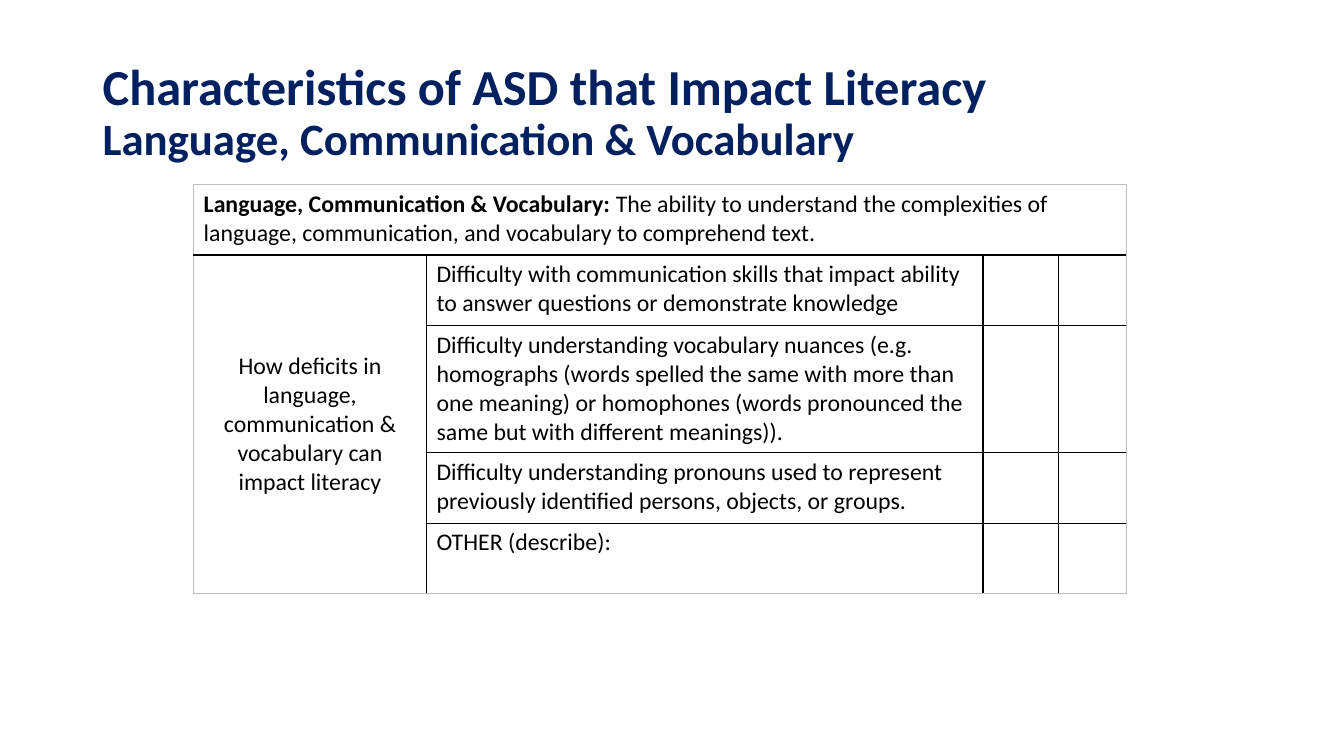
from pptx import Presentation
from pptx.dml.color import RGBColor
from pptx.enum.text import MSO_ANCHOR, PP_ALIGN
from pptx.oxml.ns import qn
from pptx.util import Inches, Pt
from lxml.etree import SubElement

FONT = "Calibri"
NAVY, BLACK, WHITE, GREY = "002060", "000000", "FFFFFF", "BFBFBF"
COLUMNS = [2.31, 5.52, 0.75, 0.67]
ROWS = [0.7, 0.7, 1.26, 0.7, 0.7]
TITLE = ["Characteristics of ASD that Impact Literacy",
         "Language, Communication & Vocabulary"]
SKILL = "Language, Communication & Vocabulary: "
DEFINITION = ("The ability to understand the complexities of language, "
              "communication, and vocabulary to comprehend text.")
IMPACT = "How deficits in language, communication & vocabulary can impact literacy"
DIFFICULTIES = [
    "Difficulty with communication skills that impact ability to answer "
    "questions or demonstrate knowledge",
    "Difficulty understanding vocabulary nuances (e.g. homographs (words spelled "
    "the same with more than one meaning) or homophones (words pronounced the "
    "same but with different meanings)).",
    "Difficulty understanding pronouns used to represent previously identified "
    "persons, objects, or groups.",
    "OTHER (describe):",
]


def rgb(value):
    """Return the colour for a hex string."""
    return RGBColor.from_string(value)


def add_run(p, text, size=17, color=BLACK, bold=False):
    """Append a formatted run to a paragraph."""
    r = p.add_run()
    r.text = text
    for name, value in {"name": FONT, "size": Pt(size), "bold": bold}.items():
        setattr(r.font, name, value)
    r.font.color.rgb = rgb(color)


def add_title(s):
    """Add the two-line heading."""
    tf = s.shapes.add_textbox(Inches(0.92), Inches(0.4),
                              Inches(11.5), Inches(1.45)).text_frame
    tf.word_wrap = True
    tf.vertical_anchor = MSO_ANCHOR.MIDDLE
    p = tf.paragraphs[0]
    p.line_spacing = 0.9
    add_run(p, TITLE[0], 36, NAVY, True)
    p.add_line_break()
    add_run(p, TITLE[1], 32, NAVY, True)


def set_border(cell, side, outer):
    """Draw one side of a cell, lighter on the outside of the table."""
    width, color = (0.5, GREY) if outer else (1, BLACK)
    ln = SubElement(cell._tc.get_or_add_tcPr(), qn(f"a:ln{side}"), w=str(Pt(width)))
    fill = SubElement(ln, qn("a:solidFill"))
    SubElement(fill, qn("a:srgbClr"), val=color)


def style_cell(cell, row, col):
    """Give a cell its borders, white fill and text size."""
    right = col + (cell.span_width if cell.is_merge_origin else 1)
    bottom = row + (cell.span_height if cell.is_merge_origin else 1)
    edges = {"L": col == 0, "R": right == len(COLUMNS),
             "T": row == 0, "B": bottom == len(ROWS)}
    for side, outer in edges.items():
        set_border(cell, side, outer)
    cell.fill.solid()
    cell.fill.fore_color.rgb = rgb(WHITE)
    cell.text_frame.paragraphs[0].font.size = Pt(17)


def add_checklist(s):
    """Add the table of difficulties with two empty check columns."""
    table = s.shapes.add_table(len(ROWS), len(COLUMNS), Inches(1.92), Inches(1.83),
                               Inches(sum(COLUMNS)), Inches(sum(ROWS))).table
    table.first_row = table.horz_banding = False
    for column, width in zip(table.columns, COLUMNS):
        column.width = Inches(width)
    for row, height in zip(table.rows, ROWS):
        row.height = Inches(height)
    header, impact = table.cell(0, 0), table.cell(1, 0)
    header.merge(table.cell(0, len(COLUMNS) - 1))
    impact.merge(table.cell(len(ROWS) - 1, 0))
    for row in range(len(ROWS)):
        for col in range(len(COLUMNS)):
            style_cell(table.cell(row, col), row, col)

    p = header.text_frame.paragraphs[0]
    add_run(p, SKILL, bold=True)
    add_run(p, DEFINITION)
    impact.vertical_anchor = MSO_ANCHOR.MIDDLE
    p = impact.text_frame.paragraphs[0]
    p.alignment = PP_ALIGN.CENTER
    add_run(p, IMPACT)
    for row, text in enumerate(DIFFICULTIES, 1):
        add_run(table.cell(row, 1).text_frame.paragraphs[0], text)


def main():
    """Build and save the slide."""
    prs = Presentation()
    prs.slide_width, prs.slide_height = Inches(13.33), Inches(7.5)
    s = prs.slides.add_slide(prs.slide_layouts[6])
    add_title(s)
    add_checklist(s)
    prs.save("out.pptx")


if __name__ == "__main__":
    main()
